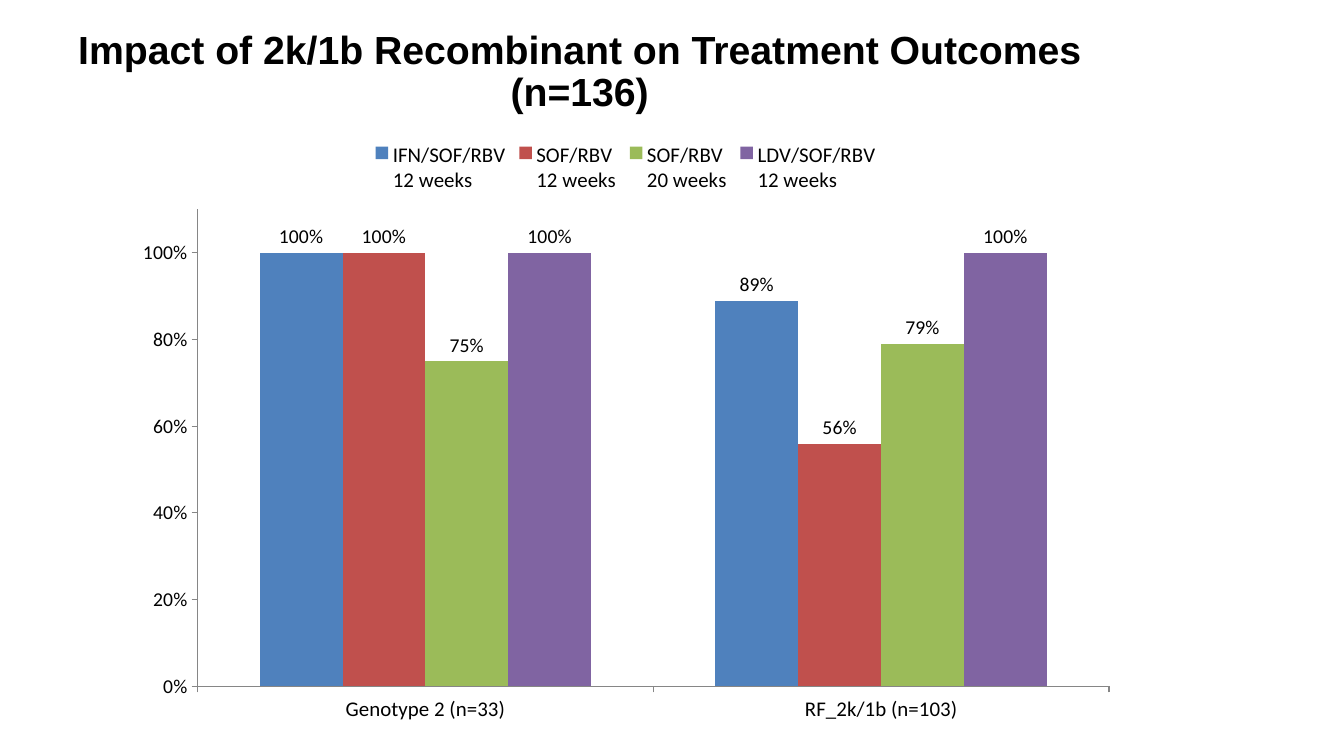
from pptx import Presentation
from pptx import util as u
from pptx.chart.data import CategoryChartData
from pptx.dml.color import RGBColor
from pptx.enum import chart as ch, text
from pptx.oxml import parse_xml
from pptx.oxml.ns import nsdecls

TITLE = "Impact of 2k/1b Recombinant on Treatment Outcomes (n=136)"
GROUPS = ["Genotype 2 (n=33)", "RF_2k/1b (n=103)"]
REGIMENS = [
    ("IFN/SOF/RBV\n12 weeks", (1, 0.89), "blue"),
    ("SOF/RBV\n12 weeks", (1, 0.56), "red"),
    ("SOF/RBV\n20 weeks", (0.75, 0.79), "green"),
    ("LDV/SOF/RBV\n12 weeks", (1, 1), "purple"),
]
COLORS = {"blue": "4F81BD", "red": "C0504D", "green": "9BBB59",
          "purple": "8064A2", "black": "000000", "axis": "868686"}
SLIDE = (13.33, 7.5)
TITLE_BOX = (0, 0, 11.5, 1.45)
CHART_BOX = (1.21, 1.3, 9.99, 5.99)
PLOT_SHARE = {"x": 0.075, "y": 0.13, "w": 0.905, "h": 0.79}


def rgb(name):
    return RGBColor.from_string(COLORS[name])


def inches(box):
    return [u.Inches(n) for n in box]


def set_font(font, size, name="Calibri", bold=False):
    font.size, font.name, font.bold = u.Pt(size), name, bold
    font.color.rgb = rgb("black")


def place_plot(chart):
    """Fix the inner plot area as shares of the chart frame."""
    shares = "".join(f'<c:{k} val="{v}"/>' for k, v in PLOT_SHARE.items())
    layout = parse_xml(
        f'<c:layout {nsdecls("c")}><c:manualLayout><c:layoutTarget val="inner"/>'
        f'<c:xMode val="edge"/><c:yMode val="edge"/>{shares}'
        '</c:manualLayout></c:layout>')
    area = chart._chartSpace.chart.plotArea
    for old in area.xpath("c:layout"):
        area.remove(old)
    area.insert(0, layout)


def add_title(slide):
    tf = slide.shapes.add_textbox(*inches(TITLE_BOX)).text_frame
    tf.word_wrap = True
    tf.vertical_anchor = text.MSO_ANCHOR.MIDDLE
    p = tf.paragraphs[0]
    p.text = TITLE
    p.alignment = text.PP_ALIGN.CENTER
    p.line_spacing = 0.9
    set_font(p.font, 28, "Arial", True)


def add_outcomes(slide):
    data = CategoryChartData(number_format="0%")
    data.categories = GROUPS
    for name, rates, _ in REGIMENS:
        data.add_series(name, rates)
    chart = slide.shapes.add_chart(
        ch.XL_CHART_TYPE.COLUMN_CLUSTERED, *inches(CHART_BOX), data).chart
    set_font(chart.font, 13.3)
    chart.has_title = False
    chart.has_legend = True
    chart.legend.position = ch.XL_LEGEND_POSITION.TOP
    chart.legend.include_in_layout = False
    set_font(chart.legend.font, 14.9)

    plot = chart.plots[0]
    plot.gap_width, plot.overlap, plot.vary_by_categories = 150, 0, False
    for series, (_, _, color) in zip(plot.series, REGIMENS):
        series.format.fill.solid()
        series.format.fill.fore_color.rgb = rgb(color)
        labels = series.data_labels
        labels.show_value = True
        labels.number_format, labels.number_format_is_linked = "0%", False
        labels.position = ch.XL_LABEL_POSITION.OUTSIDE_END
        set_font(labels.font, 14)

    for axis, size in ((chart.category_axis, 14.9), (chart.value_axis, 14)):
        axis.has_major_gridlines = False
        axis.major_tick_mark = ch.XL_TICK_MARK.OUTSIDE
        axis.minor_tick_mark = ch.XL_TICK_MARK.NONE
        axis.format.line.color.rgb = rgb("axis")
        axis.format.line.width = u.Pt(0.75)
        set_font(axis.tick_labels.font, size)
    rate = chart.value_axis
    rate.minimum_scale, rate.maximum_scale, rate.major_unit = 0, 1.1, 0.2
    rate.tick_labels.number_format = "0%"
    rate.tick_labels.number_format_is_linked = False
    place_plot(chart)


def main():
    prs = Presentation()
    prs.slide_width, prs.slide_height = inches(SLIDE)
    slide = prs.slides.add_slide(prs.slide_layouts[6])
    add_title(slide)
    add_outcomes(slide)
    prs.save("out.pptx")


if __name__ == "__main__":
    main()
